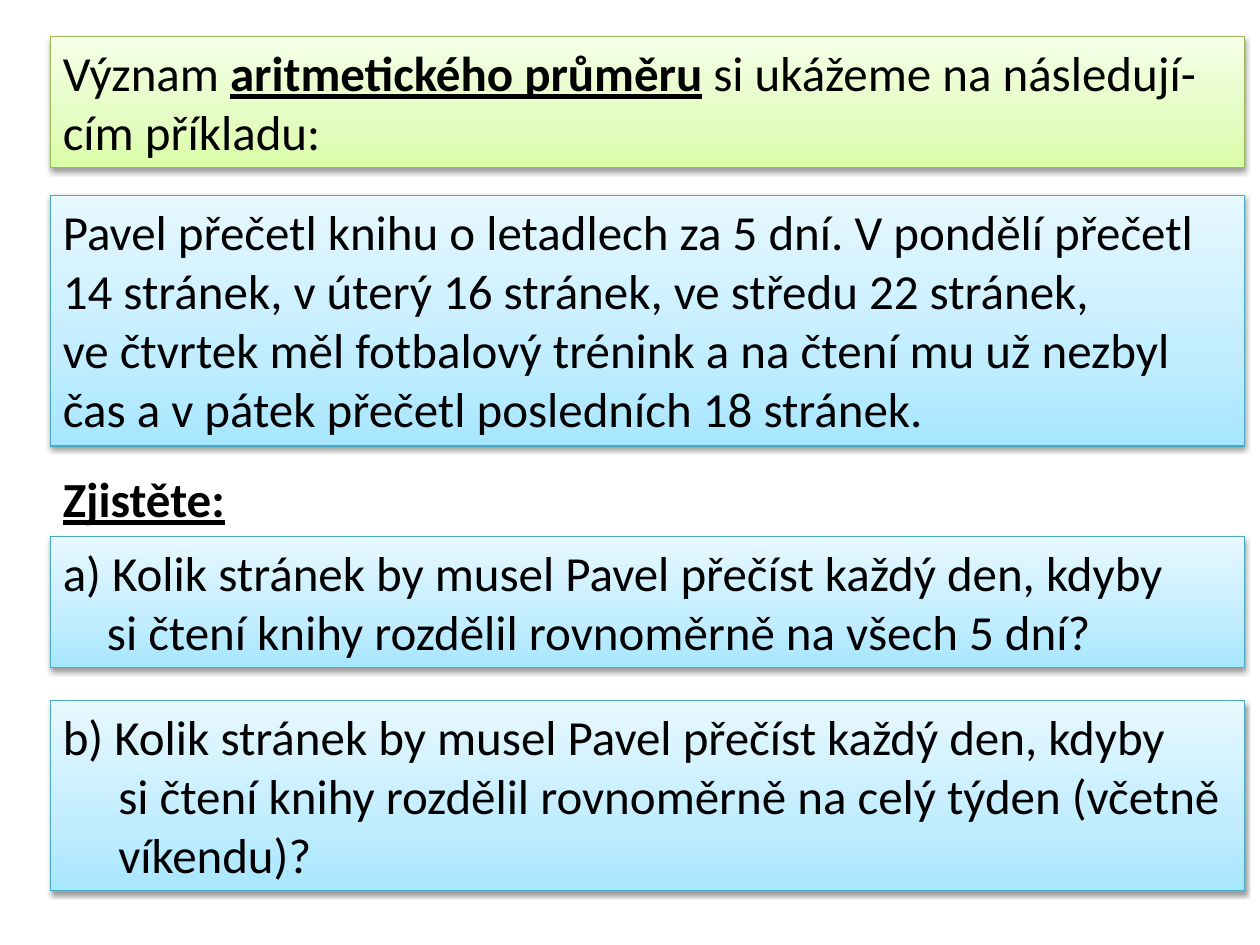
from copy import deepcopy

from lxml import etree
from pptx import Presentation
from pptx.dml.color import RGBColor
from pptx.enum.shapes import MSO_SHAPE
from pptx.enum.text import MSO_ANCHOR, PP_ALIGN
from pptx.oxml.ns import qn
from pptx.util import Inches, Pt

RECTANGLE = MSO_SHAPE.RECTANGLE
LEFT = PP_ALIGN.LEFT
TOP = MSO_ANCHOR.TOP

BLACK = RGBColor(0x00, 0x00, 0x00)
GREEN_LINE = RGBColor(0x98, 0xB9, 0x55)
GREEN_STOPS = (RGBColor(0xDA, 0xFD, 0xA7), RGBColor(0xE4, 0xFC, 0xC2), RGBColor(0xF5, 0xFF, 0xE7))
BLUE_LINE = RGBColor(0x46, 0xAA, 0xC5)
BLUE_STOPS = (RGBColor(0xA7, 0xE6, 0xFF), RGBColor(0xC1, 0xED, 0xFF), RGBColor(0xE7, 0xF8, 0xFF))
STOP_POSITIONS = (0, 0.35, 1)

PANEL_LEFT = 0.4
PANEL_WIDTH = 9.48


def fill_gradient(panel, colors):
    panel.fill.gradient()
    panel.fill.gradient_angle = 90
    stop_list = next(panel._element.spPr.iter(qn("a:gsLst")))
    stop_list.append(deepcopy(stop_list[0]))
    for stop, position, color in zip(panel.fill.gradient_stops, STOP_POSITIONS, colors):
        stop.position = position
        stop.color.rgb = color


def add_soft_shadow(panel):
    panel.shadow.inherit = False
    effects = panel._element.spPr.find(qn("a:effectLst"))
    shadow = etree.SubElement(
        effects, qn("a:outerShdw"), blurRad=str(Pt(3.1)), dist=str(Pt(1.6)),
        dir="5400000", rotWithShape="0")
    color = etree.SubElement(shadow, qn("a:srgbClr"), val=str(BLACK))
    etree.SubElement(color, qn("a:alpha"), val="38000")


def write_lines(frame, lines, indent=0):
    frame.vertical_anchor = TOP
    for number, line in enumerate(lines):
        paragraph = frame.paragraphs[0] if number == 0 else frame.add_paragraph()
        paragraph.alignment = LEFT
        if number and indent:
            paragraph._p.get_or_add_pPr().set("marL", str(Inches(indent)))
        for text, emphasized in line:
            run = paragraph.add_run()
            run.text = text
            run.font.name = "Calibri"
            run.font.size = Pt(28)
            run.font.color.rgb = BLACK
            run.font.bold = emphasized
            run.font.underline = emphasized


def add_panel(slide, top, height, lines, colors=BLUE_STOPS, border=BLUE_LINE, indent=0):
    panel = slide.shapes.add_shape(
        RECTANGLE, Inches(PANEL_LEFT), Inches(top), Inches(PANEL_WIDTH), Inches(height))
    fill_gradient(panel, colors)
    panel.line.color.rgb = border
    panel.line.width = Pt(0.75)
    add_soft_shadow(panel)
    panel.text_frame.word_wrap = True
    write_lines(panel.text_frame, lines, indent)


def add_task_heading(slide, top, width, height):
    heading = slide.shapes.add_textbox(
        Inches(PANEL_LEFT), Inches(top), Inches(width), Inches(height))
    heading.text_frame.word_wrap = False
    write_lines(heading.text_frame, [[("Zjistěte:", True)]])


def plain(*texts):
    return [[(text, False)] for text in texts]


def main():
    presentation = Presentation()
    presentation.slide_width = Inches(10)
    presentation.slide_height = Inches(7.5)
    slide = presentation.slides.add_slide(presentation.slide_layouts[6])

    introduction = [
        [("Význam ", False), ("aritmetického průměru", True),
         (" si ukážeme na následují-", False)],
        [("cím příkladu:", False)],
    ]
    story = plain(
        "Pavel přečetl knihu o letadlech za 5 dní. V pondělí přečetl",
        "14 stránek, v úterý 16 stránek, ve středu 22 stránek,",
        "ve čtvrtek měl fotbalový trénink a na čtení mu už nezbyl",
        "čas a v pátek přečetl posledních 18 stránek.")
    question_a = plain(
        "a) Kolik stránek by musel Pavel přečíst každý den, kdyby",
        "si čtení knihy rozdělil rovnoměrně na všech 5 dní?")
    question_b = plain(
        "b) Kolik stránek by musel Pavel přečíst každý den, kdyby",
        "si čtení knihy rozdělil rovnoměrně na celý týden (včetně",
        "víkendu)?")

    add_panel(slide, 0.29, 1.04, introduction, GREEN_STOPS, GREEN_LINE)
    add_panel(slide, 1.55, 1.99, story)
    add_panel(slide, 4.26, 1.04, question_a, indent=0.35)
    add_task_heading(slide, 3.67, 1.5, 0.57)
    add_panel(slide, 5.56, 1.51, question_b, indent=0.44)

    presentation.save("out.pptx")


if __name__ == "__main__":
    main()
